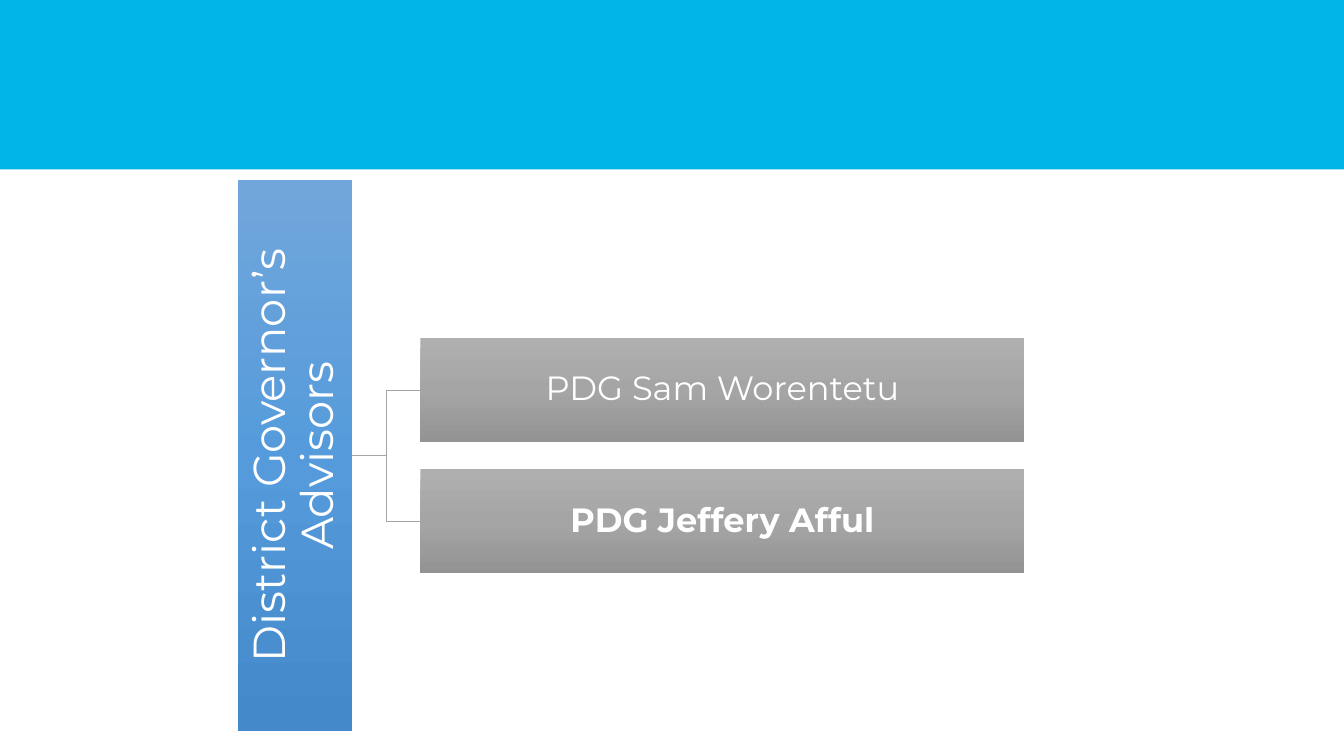
from copy import deepcopy

from pptx import Presentation
from pptx.dml.color import RGBColor
from pptx.enum.shapes import MSO_CONNECTOR, MSO_SHAPE
from pptx.enum.text import MSO_ANCHOR, PP_ALIGN
from pptx.oxml.ns import qn
from pptx.oxml.xmlchemy import OxmlElement
from pptx.util import Inches, Pt

THEME = {
    "font": "Montserrat",
    "text": "FFFFFF",
    "banner": "01B4E7",
    "line": "A5A5A5",
    "blue": ("71A6DB", "559BDB", "448ACA"),
    "gray": ("AFAFAF", "A5A5A5", "939393"),
    "title_size": 32,
    "name_size": 24,
}


def write_text(box, text, size, bold=False, direction="horz"):
    frame = box.text_frame
    frame.word_wrap = True
    frame.vertical_anchor = MSO_ANCHOR.MIDDLE
    frame.margin_left = frame.margin_right = Inches(0.02)
    frame.margin_top = frame.margin_bottom = Inches(0.02)
    frame._txBody.bodyPr.set("vert", direction)
    para = frame.paragraphs[0]
    para.alignment = PP_ALIGN.CENTER
    para.line_spacing = 0.9
    span = para.add_run()
    span.text = text
    span.font.name = THEME["font"]
    span.font.size = Pt(size)
    span.font.bold = bold
    span.font.color.rgb = RGBColor.from_string(THEME["text"])


def add_gradient_box(page, left, top, width, height, colors):
    box = page.shapes.add_shape(
        MSO_SHAPE.RECTANGLE, Inches(left), Inches(top), Inches(width), Inches(height)
    )
    box.shadow.inherit = False
    box.line.fill.background()
    box.fill.gradient()
    box.fill.gradient_angle = 270
    stop_list = box._element.spPr.find(".//" + qn("a:gsLst"))
    stop_list.insert(1, deepcopy(stop_list[0]))
    for stop, color, position in zip(box.fill.gradient_stops, colors, (0, 0.5, 1)):
        stop.color.rgb = RGBColor.from_string(color)
        stop.position = position
    return box


deck = Presentation()
deck.slide_width = Inches(13.33)
deck.slide_height = Inches(7.5)
page = deck.slides.add_slide(deck.slide_layouts[6])

banner = page.shapes.add_shape(
    MSO_SHAPE.RECTANGLE, 0, 0, deck.slide_width, Inches(1.68)
)
banner.shadow.inherit = False
banner.fill.solid()
banner.fill.fore_color.rgb = RGBColor.from_string(THEME["banner"])
banner.line.fill.background()

advisors_bar = add_gradient_box(page, 2.36, 1.79, 1.13, 5.46, THEME["blue"])
write_text(
    advisors_bar,
    "District Governor’s Advisors",
    size=THEME["title_size"],
    direction="vert270",
)

advisors = [("PDG Sam Worentetu", False), ("PDG Jeffery Afful", True)]
for row, (name, bold) in enumerate(advisors):
    name_box = add_gradient_box(page, 4.17, 3.35 + 1.3 * row, 5.99, 1.04, THEME["gray"])
    write_text(name_box, name, size=THEME["name_size"], bold=bold)
    branch = page.shapes.add_connector(MSO_CONNECTOR.ELBOW, 0, 0, 0, 0)
    branch.begin_connect(advisors_bar, 3)
    branch.end_connect(name_box, 1)
    branch.line.color.rgb = RGBColor.from_string(THEME["line"])
    branch.line.width = Pt(0.5)
    branch._element.spPr.append(OxmlElement("a:effectLst"))

deck.save("out.pptx")
